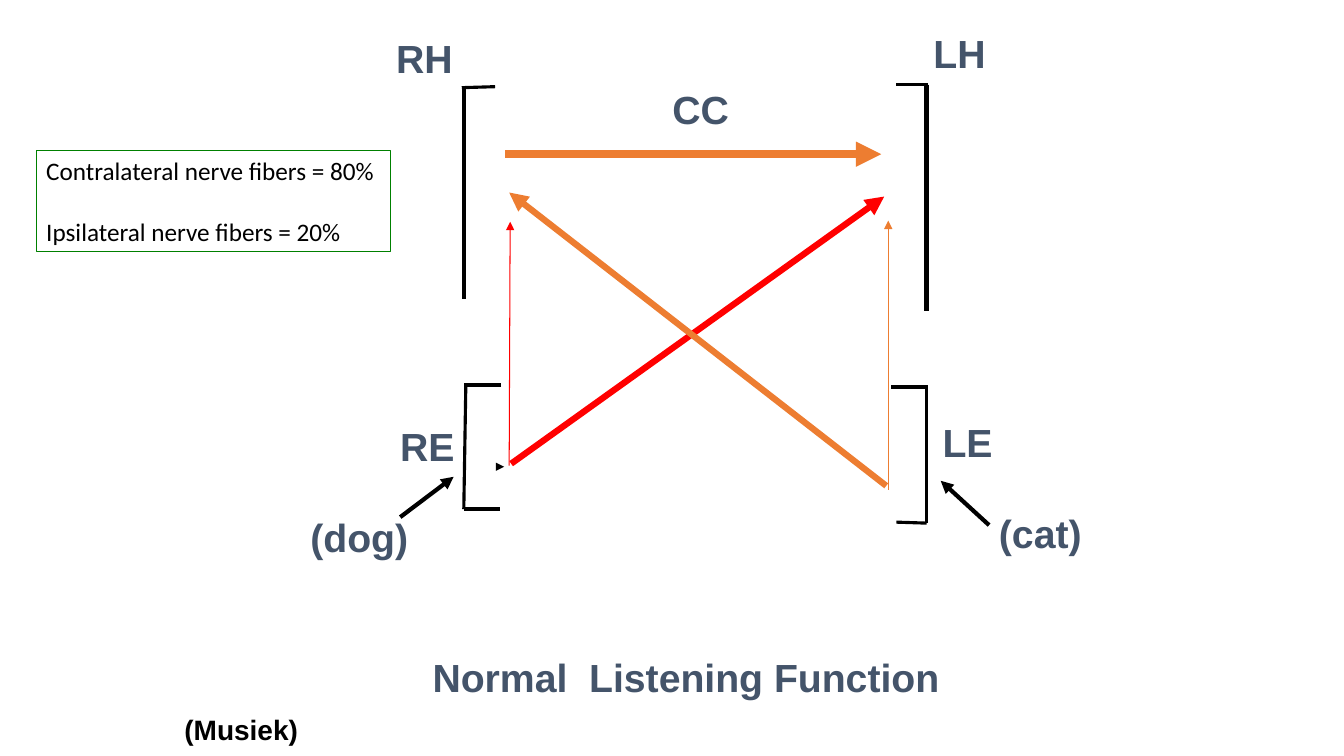
from lxml import etree
from pptx import Presentation
from pptx.dml.color import RGBColor
from pptx.enum.shapes import MSO_CONNECTOR, MSO_SHAPE
from pptx.enum.text import MSO_ANCHOR, MSO_AUTO_SIZE, PP_ALIGN
from pptx.oxml.ns import qn
from pptx.util import Inches, Pt

COLORS = {
    "black": "000000",
    "label": "44546A",
    "left_ear": "ED7D31",
    "right_ear": "FF0000",
    "border": "008000",
}


def add_line(slide, start, end, color, width, arrow=False):
    line = slide.shapes.add_connector(
        MSO_CONNECTOR.STRAIGHT, *(Inches(value) for value in (*start, *end)))
    line.line.color.rgb = RGBColor.from_string(COLORS[color])
    line.line.width = Pt(width)
    properties = line._element.spPr
    etree.SubElement(properties, qn("a:effectLst"))
    if arrow:
        etree.SubElement(properties.find(qn("a:ln")), qn("a:tailEnd"), type="triangle")


def write_paragraph(paragraph, text, size, color, font="Arial", bold=True):
    paragraph.alignment = PP_ALIGN.LEFT
    run = paragraph.add_run()
    run.text = text
    run.font.name = font
    run.font.size = Pt(size)
    run.font.bold = bold
    run.font.color.rgb = RGBColor.from_string(COLORS[color])


presentation = Presentation()
presentation.slide_width = Inches(13.33)
presentation.slide_height = Inches(7.5)
slide = presentation.slides.add_slide(presentation.slide_layouts[5])

# Brackets around the ears and the hemispheres: start, end, width
bracket_lines = [
    ((8.84, 3.84), (9.2, 3.84), 2.25),
    ((9.19, 3.85), (9.19, 5.19), 2.25),
    ((9.19, 5.19), (8.89, 5.18), 2.25),
    ((4.97, 3.82), (4.6, 3.82), 2.25),
    ((4.62, 3.84), (4.6, 5.05), 2.25),
    ((4.6, 5.05), (4.96, 5.05), 2.25),
    ((8.89, 0.84), (9.2, 0.84), 2.25),
    ((9.19, 0.84), (9.19, 3.09), 3),
    ((4.91, 0.86), (4.58, 0.87), 2.25),
    ((4.6, 0.87), (4.6, 2.97), 3),
]
for start, end, width in bracket_lines:
    add_line(slide, start, end, "black", width)

# Nerve pathways and the words entering each ear
arrows = [
    ((8.81, 4.86), (8.81, 2.19), "left_ear", 0.75),
    ((4.93, 4.63), (5, 4.63), "black", 0.75),
    ((5.05, 4.62), (5.06, 2.2), "right_ear", 0.75),
    ((5.07, 4.6), (8.77, 1.95), "right_ear", 4.5),
    ((8.79, 4.82), (5.05, 1.91), "left_ear", 4.5),
    ((5.01, 1.53), (8.74, 1.53), "left_ear", 6),
    ((3.97, 5.13), (4.5, 4.73), "black", 3),
    ((9.81, 5.21), (9.33, 4.77), "black", 3),
]
for start, end, color, width in arrows:
    add_line(slide, start, end, color, width, arrow=True)

labels = [
    ("RE", 3.87, 4.14, 0.74, 0.57, 28, "label"),
    ("LE", 9.25, 4.1, 0.7, 0.57, 28, "label"),
    ("RH", 3.83, 0.29, 0.76, 0.57, 28, "label"),
    ("LH", 9.16, 0.24, 0.72, 0.57, 28, "label"),
    ("CC", 6.57, 0.8, 0.76, 0.57, 28, "label"),
    ("(dog)", 2.98, 5.04, 1.19, 0.57, 28, "label"),
    ("(cat)", 9.81, 5, 1.03, 0.57, 28, "label"),
    ("(Musiek)", 1.73, 7.02, 1.33, 0.43, 20, "black"),
]
for text, left, top, width, height, size, color in labels:
    box = slide.shapes.add_textbox(
        Inches(left), Inches(top), Inches(width), Inches(height))
    box.text_frame.word_wrap = False
    write_paragraph(box.text_frame.paragraphs[0], text, size, color)

title = slide.shapes.title
title.left, title.top = Inches(4.19), Inches(6.43)
title.width, title.height = Inches(6.35), Inches(0.57)
title.text_frame.auto_size = MSO_AUTO_SIZE.NONE
title.text_frame.vertical_anchor = MSO_ANCHOR.TOP
write_paragraph(title.text_frame.paragraphs[0], "Normal  Listening Function", 28, "label")

fibers = slide.shapes.add_shape(
    MSO_SHAPE.RECTANGLE, Inches(0.36), Inches(1.49), Inches(3.51), Inches(1.01))
fibers.shadow.inherit = False
fibers.fill.background()
fibers.line.color.rgb = RGBColor.from_string(COLORS["border"])
fibers.line.width = Pt(0.75)
frame = fibers.text_frame
frame.word_wrap = False
frame.vertical_anchor = MSO_ANCHOR.TOP
contralateral = frame.paragraphs[0]
ipsilateral = frame.add_paragraph()
ipsilateral.space_before = Pt(22)
write_paragraph(contralateral, "Contralateral nerve fibers = 80%", 18, "black", "Calibri", False)
write_paragraph(ipsilateral, "Ipsilateral nerve fibers = 20%", 18, "black", "Calibri", False)

presentation.save("out.pptx")
